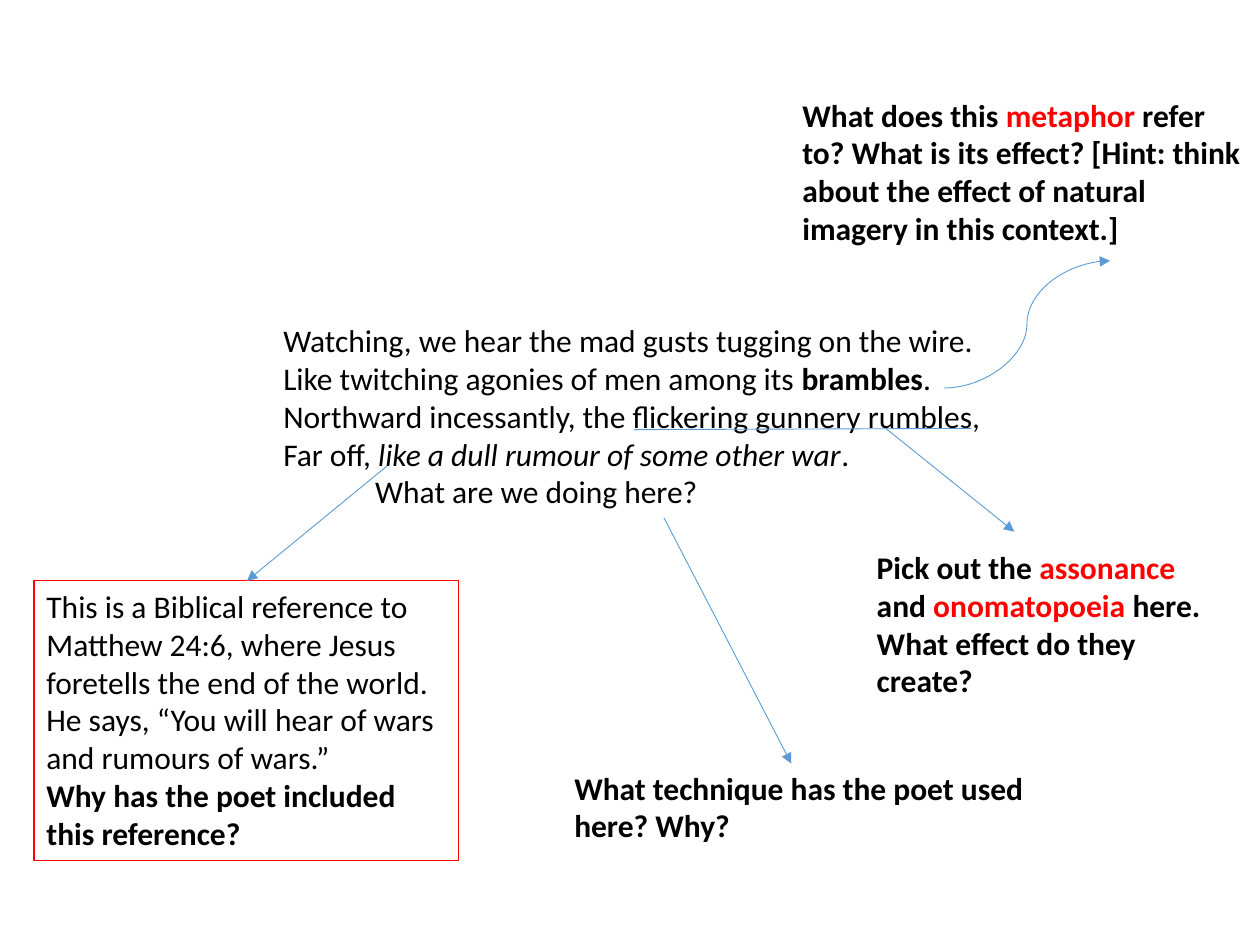
"""Build an annotated poem slide with questions around a stanza."""
from lxml.etree import SubElement
from pptx import Presentation
from pptx.dml.color import RGBColor
from pptx.enum.shapes import MSO_CONNECTOR as Route
from pptx.oxml.ns import qn
from pptx.util import Inches, Pt

COLORS = {"ink": "000000", "term": "FF0000", "arrow": "5B9BD5"}


class AnnotatedSlide:
    """Holds the style and the current slide."""

    font_name = "Calibri"
    font_size = 18

    def __init__(self, deck):
        self.slide = deck.slides.add_slide(deck.slide_layouts[6])

    def color(self, name):
        return RGBColor.from_string(COLORS[name])

    def passage(self, left, top, width, height, paragraphs):
        box = self.slide.shapes.add_textbox(*map(Inches, (left, top, width, height)))
        frame = box.text_frame
        frame.word_wrap = True
        for index, pieces in enumerate(paragraphs):
            paragraph = frame.paragraphs[0] if index == 0 else frame.add_paragraph()
            paragraph.font.name = self.font_name
            paragraph.font.size = Pt(self.font_size)
            paragraph.font.color.rgb = self.color("ink")
            for words, style in pieces:
                run = paragraph.add_run()
                run.text = words
                if style in ("bold", "term"):
                    run.font.bold = True
                if style == "italic":
                    run.font.italic = True
                if style == "term":
                    run.font.color.rgb = self.color("term")
        return box

    def border(self, box):
        box.line.color.rgb = self.color("term")
        box.line.width = Pt(0.75)

    def indent(self, paragraph, distance):
        paragraph._p.get_or_add_pPr().set("marL", str(Inches(distance)))

    def link(self, start, end, route=Route.STRAIGHT, arrow=True):
        line = self.slide.shapes.add_connector(route, *map(Inches, start + end))
        line.line.color.rgb = self.color("arrow")
        line.line.width = Pt(0.5)
        if arrow:
            SubElement(line.line._get_or_add_ln(), qn("a:tailEnd"), type="triangle")
        SubElement(line._element.spPr, qn("a:effectLst"))


deck = Presentation()
deck.slide_width, deck.slide_height = Inches(10), Inches(7.5)
page = AnnotatedSlide(deck)

stanza = page.passage(2.15, 2.5, 6.24, 1.62, [
    [("Watching, we hear the mad gusts tugging on the wire.", "plain")],
    [("Like twitching agonies of men among its ", "plain"),
     ("brambles", "bold"), (".", "plain")],
    [("Northward incessantly, the flickering gunnery rumbles,", "plain")],
    [("Far off, ", "plain"),
     ("like a dull rumour of some other war", "italic"), (".", "plain")],
    [("What are we doing here?", "plain")],
])
page.indent(stanza.text_frame.paragraphs[-1], 0.73)

page.link((7.49, 3.08), (8.81, 2.07), Route.CURVE)
page.link((5.03, 3.41), (7.71, 3.4), arrow=False)
page.link((7.03, 3.4), (8.05, 4.22))

page.passage(6.86, 4.3, 2.85, 1.31, [[
    ("Pick out the ", "bold"), ("assonance ", "term"), ("and ", "bold"),
    ("onomatopoeia", "term"), (" here. What effect do they create?", "bold"),
]])

biblical_reference = page.passage(0.27, 4.61, 3.37, 2.22, [
    [("This is a Biblical reference to Matthew 24:6, where Jesus foretells the end "
      "of the world. He says, “You will hear of wars and rumours of wars.”", "plain")],
    [("Why has the poet included this reference?", "bold")],
])
page.border(biblical_reference)
page.link((3.07, 3.7), (1.96, 4.61))

page.passage(4.46, 6.05, 3.93, 0.71, [
    [("What technique has the poet used here? Why?", "bold")],
])
page.link((5.27, 4.11), (6.28, 6.06))

page.passage(6.27, 0.71, 3.73, 1.31, [[
    ("What does this ", "bold"), ("metaphor", "term"),
    (" refer to? What is its effect? [Hint: think about the effect of natural "
     "imagery in this context.]", "bold"),
]])

deck.save("out.pptx")
